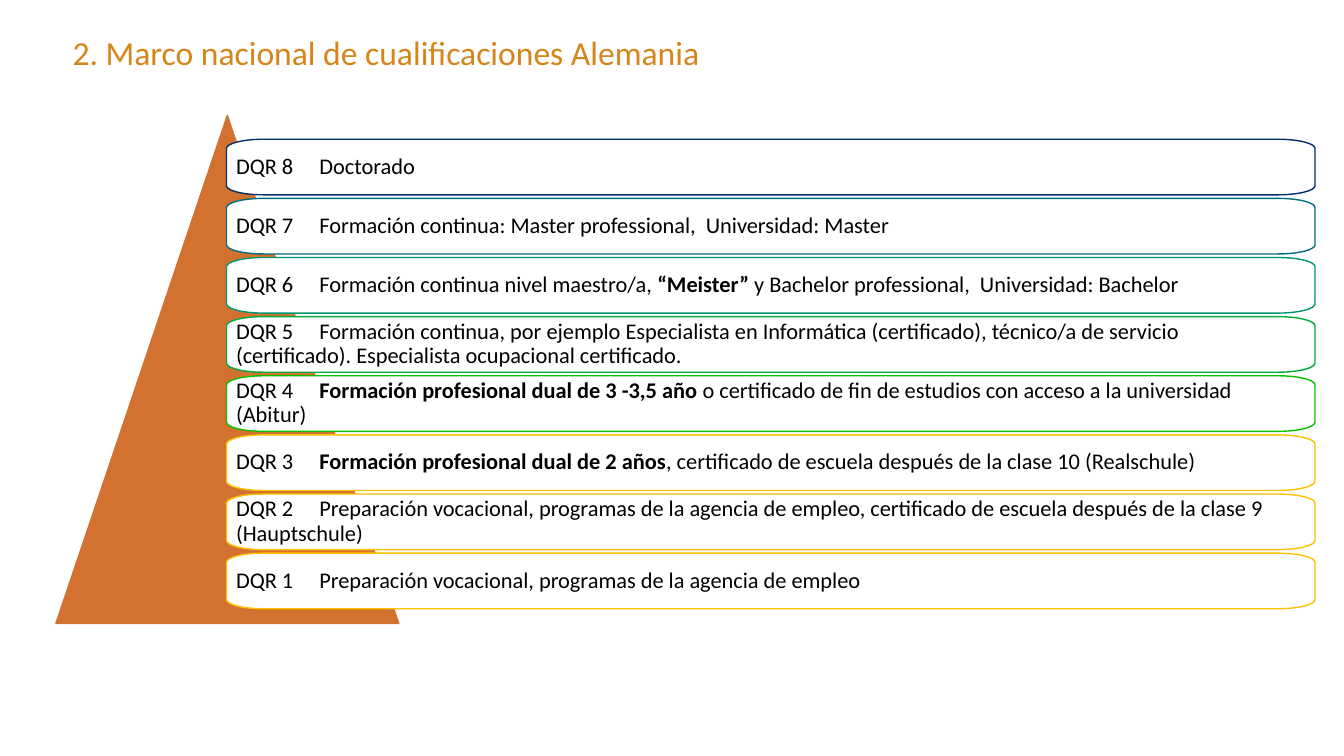
import pptx
import pptx.dml.color
import pptx.enum.shapes
import pptx.enum.text
import pptx.oxml
import pptx.oxml.ns
import pptx.util

Cm = pptx.util.Cm
ANCHOR = pptx.enum.text.MSO_ANCHOR

HEADING = "2. Marco nacional de cualificaciones Alemania"
# Line colour and text pieces of each level; every second piece is bold.
LEVELS = [
    ("00306B", ["DQR 8\tDoctorado"]),
    ("006D80", ["DQR 7\tFormación continua: Master professional,  Universidad: Master"]),
    ("009570", ["DQR 6 \tFormación continua nivel maestro/a, ", "“Meister” ",
                "y Bachelor professional,  Universidad: Bachelor"]),
    ("00AA3C", ["DQR 5\tFormación continua, por ejemplo Especialista en Informática "
                "(certificado), técnico/a de servicio \t"
                "(certificado). Especialista ocupacional certificado."]),
    ("09C000", ["DQR 4\t", "Formación profesional dual de 3 -3,5 año ",
                "o certificado de fin de estudios con acceso a la universidad \t(Abitur)"]),
    ("FFC000", ["DQR 3\t", "Formación profesional dual de 2 años",
                ", certificado de escuela después de la clase 10 (Realschule)"]),
    ("FFC000", ["DQR 2 \tPreparación vocacional, programas de la agencia de empleo, "
                "certificado de escuela después de la clase 9 \t(Hauptschule)"]),
    ("FFC000", ["DQR 1\tPreparación vocacional, programas de la agencia de empleo"]),
]

BAR_LEFT, BAR_TOP, BAR_WIDTH, BAR_HEIGHT = 5.71, 3.51, 27.43, 1.4
BAR_PITCH = 1.49
CORNER_WIDTH, CORNER_HEIGHT = 0.93, 0.23
CURVE = 0.55  # share of the way to the corner at which a curve handle sits
TAB_STOPS = (2.1, 26.5)  # the second lies at the right edge, so the text after it wraps


def rgb(value):
    return pptx.dml.color.RGBColor.from_string(value)


def write(shape, pieces, size, color="000000", inset=0.0, spacing=1.0, tabs=(),
          anchor=ANCHOR.MIDDLE):
    """Fill the shape with one left-aligned paragraph; odd pieces are bold."""
    frame = shape.text_frame
    frame.word_wrap = True
    frame.auto_size = pptx.enum.text.MSO_AUTO_SIZE.NONE
    frame.vertical_anchor = anchor
    frame.margin_left = frame.margin_right = Cm(inset)
    frame.margin_top = frame.margin_bottom = Cm(inset)
    paragraph = frame.paragraphs[0]
    paragraph.alignment = pptx.enum.text.PP_ALIGN.LEFT
    paragraph.line_spacing = spacing
    if tabs:
        stops = "".join(f'<a:tab pos="{Cm(tab)}" algn="l"/>' for tab in tabs)
        paragraph._p.get_or_add_pPr().append(pptx.oxml.parse_xml(
            f'<a:tabLst {pptx.oxml.ns.nsdecls("a")}>{stops}</a:tabLst>'))
    for index, piece in enumerate(pieces):
        run = paragraph.add_run()
        run.text = piece
        run.font.name = "Calibri"
        run.font.size = pptx.util.Pt(size)
        run.font.bold = index % 2 == 1
        run.font.color.rgb = rgb(color)


def paint(shape, fill, line):
    shape.shadow.inherit = False
    shape.fill.solid()
    shape.fill.fore_color.rgb = rgb(fill)
    shape.line.color.rgb = rgb(line)
    shape.line.width = pptx.util.Pt(1)


def round_corners(bar):
    """Turn every second side of the outline, the cut corners, into a curve."""
    outline = bar._element.spPr.find(".//" + pptx.oxml.ns.qn("a:path"))
    sides = [side for side in outline if len(side)]
    ends = [(int(side[0].get("x")), int(side[0].get("y"))) for side in sides]
    for index in range(1, len(sides), 2):
        (x0, y0), (x1, y1) = ends[index - 1], ends[index]
        # The curve leaves a vertical side at the first and third of each four.
        corner_x, corner_y = (x0, y1) if index % 4 == 1 else (x1, y0)
        handles = [(round(x + CURVE * (corner_x - x)), round(y + CURVE * (corner_y - y)))
                   for x, y in (ends[index - 1], ends[index])]
        points = "".join(f'<a:pt x="{x}" y="{y}"/>' for x, y in handles + [(x1, y1)])
        outline.replace(sides[index], pptx.oxml.parse_xml(
            f'<a:cubicBezTo {pptx.oxml.ns.nsdecls("a")}>{points}</a:cubicBezTo>'))


def add_bar(slide, top):
    right, bottom = BAR_LEFT + BAR_WIDTH, top + BAR_HEIGHT
    inner_left, inner_right = BAR_LEFT + CORNER_WIDTH, right - CORNER_WIDTH
    inner_top, inner_bottom = top + CORNER_HEIGHT, bottom - CORNER_HEIGHT
    start, *others = [
        (Cm(x), Cm(y)) for x, y in (
            (BAR_LEFT, inner_top), (inner_left, top), (inner_right, top), (right, inner_top),
            (right, inner_bottom), (inner_right, bottom), (inner_left, bottom),
            (BAR_LEFT, inner_bottom))]
    builder = slide.shapes.build_freeform(*start)
    builder.add_line_segments(others, close=True)
    bar = builder.convert_to_shape()
    round_corners(bar)
    return bar


def main():
    deck = pptx.Presentation()
    deck.slide_width, deck.slide_height = Cm(33.87), Cm(19.05)
    slide = deck.slides.add_slide(deck.slide_layouts[5])

    heading = slide.shapes.title
    heading.left, heading.top, heading.width, heading.height = (
        Cm(1.83), Cm(0.81), Cm(26.82 - 1.83), Cm(1.24))
    write(heading, [HEADING], size=24, color="D6851B", anchor=ANCHOR.TOP)

    pyramid = slide.shapes.add_shape(
        pptx.enum.shapes.MSO_SHAPE.ISOSCELES_TRIANGLE, Cm(1.41), Cm(2.91), Cm(8.64), Cm(12.8))
    paint(pyramid, "D37230", "D37230")

    for row, (line, pieces) in enumerate(LEVELS):
        bar = add_bar(slide, BAR_TOP + row * BAR_PITCH)
        paint(bar, "FFFFFF", line)
        write(bar, pieces, size=16, inset=0.24, spacing=0.9, tabs=TAB_STOPS)

    deck.save("out.pptx")


if __name__ == "__main__":
    main()
